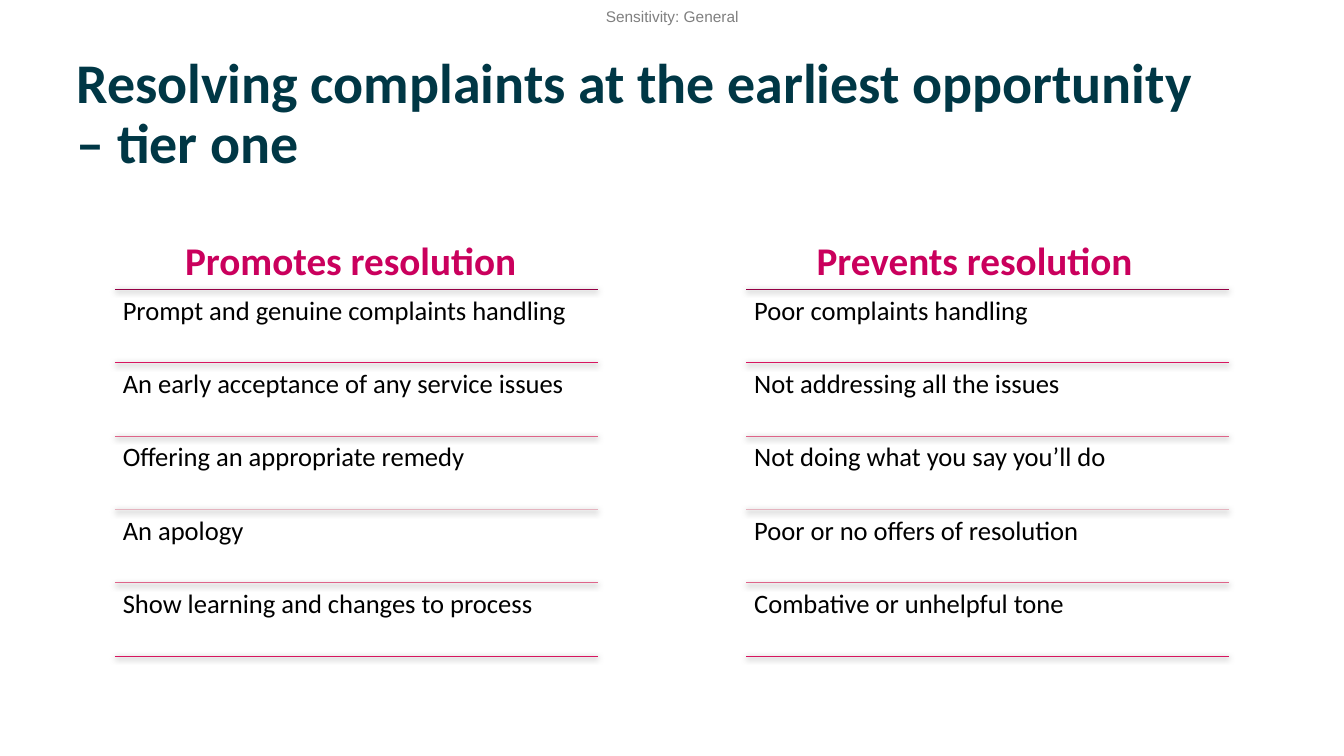
from lxml.etree import SubElement
from pptx import Presentation
from pptx.dml.color import RGBColor
from pptx.enum.shapes import MSO_CONNECTOR
from pptx.enum.text import MSO_ANCHOR, MSO_AUTO_SIZE, PP_ALIGN
from pptx.oxml.ns import qn
from pptx.util import Pt

COLOURS = {
    "sensitivity": "7F7F7F",
    "title": "003745",
    "heading": "CA005D",
    "reason": "000000",
    "shadow": "000000",
    "rule_dark": "950045",
    "rule_strong": "D7155F",
    "rule_medium": "DE6489",
    "rule_pale": "E4B4BF",
}
RULES = ["rule_dark", "rule_strong", "rule_medium", "rule_pale", "rule_medium", "rule_strong"]

PROMOTES = [
    "Prompt and genuine complaints handling",
    "An early acceptance of any service issues",
    "Offering an appropriate remedy",
    "An apology",
    "Show learning and changes to process",
]
PREVENTS = [
    "Poor complaints handling",
    "Not addressing all the issues",
    "Not doing what you say you’ll do",
    "Poor or no offers of resolution",
    "Combative or unhelpful tone",
]


def write(holder, text, *, box, size, colour, bold=False, font="Calibri", spacing=1.0,
          insets=(7.2, 3.6), anchor=MSO_ANCHOR.TOP, wrap=True):
    """Place a text holder in its box and fill it with formatted lines."""
    holder.left, holder.top, holder.width, holder.height = (Pt(length) for length in box)
    frame = holder.text_frame
    frame.text = text
    frame.word_wrap = wrap
    frame.auto_size = MSO_AUTO_SIZE.NONE
    frame.vertical_anchor = anchor
    frame.margin_left = frame.margin_right = Pt(insets[0])
    frame.margin_top = frame.margin_bottom = Pt(insets[1])
    for line in frame.paragraphs:
        line.alignment = PP_ALIGN.LEFT
        line.line_spacing = spacing
        line.font.name = font
        line.font.size = Pt(size)
        line.font.bold = bold
        line.font.color.rgb = RGBColor.from_string(COLOURS[colour])


def add_text(slide, text, **style):
    """Add a text box with formatted text."""
    write(slide.shapes.add_textbox(0, 0, 0, 0), text, **style)


def add_rule(slide, left, top, width, colour):
    """Draw a thin horizontal rule with a soft shadow below it."""
    rule = slide.shapes.add_connector(
        MSO_CONNECTOR.STRAIGHT, Pt(left), Pt(top), Pt(left + width), Pt(top))
    rule.line.width = Pt(0.5)
    rule.line.color.rgb = RGBColor.from_string(COLOURS[colour])
    effects = SubElement(rule._element.spPr, qn("a:effectLst"))
    shadow = SubElement(effects, qn("a:outerShdw"), blurRad=str(Pt(4.5)),
                        dist=str(Pt(1.5)), dir="5400000", algn="ctr", rotWithShape="0")
    tint = SubElement(shadow, qn("a:srgbClr"), val=COLOURS["shadow"])
    SubElement(tint, qn("a:alpha"), val="63000")


def add_header(slide, left, top, width, height):
    """Write the sensitivity label and the slide title in the given band."""
    add_text(slide, "Sensitivity: General", box=(left + 385.2, top, 98, 13), size=11,
             colour="sensitivity", font="Arial", insets=(0, 0), wrap=False)
    write(slide.shapes.title, "Resolving complaints at the earliest opportunity\n– tier one",
          box=(left, top + 30, width, height - 30), size=40, colour="title", bold=True,
          spacing=0.9, anchor=MSO_ANCHOR.MIDDLE)


def add_column(slide, heading, reasons, left, top, width, height):
    """Build a headed column of reasons separated by rules."""
    heading_height = 41
    rows_top = top + heading_height
    pitch = (height - heading_height) / len(reasons)
    add_text(slide, heading, box=(left + 43.2, top, width - 43.2, heading_height),
             size=28, colour="heading", bold=True)
    for row, colour in enumerate(RULES):
        add_rule(slide, left, rows_top + row * pitch, width, colour)
    for row, reason in enumerate(reasons):
        add_text(slide, reason, box=(left, rows_top + row * pitch, width, pitch), size=19,
                 colour="reason", spacing=0.9, insets=(5.7, 5.7))


def main():
    """Build and save the slide."""
    deck = Presentation()
    deck.slide_width, deck.slide_height = Pt(960), Pt(540)
    slide = deck.slides.add_slide(deck.slide_layouts[5])
    add_header(slide, 47.5, 5.2, 903.6, 124.4)
    add_column(slide, "Promotes resolution", PROMOTES, 82, 165.6, 345, 303)
    add_column(slide, "Prevents resolution", PREVENTS, 533, 165.6, 345, 303)
    deck.save("out.pptx")


if __name__ == "__main__":
    main()
